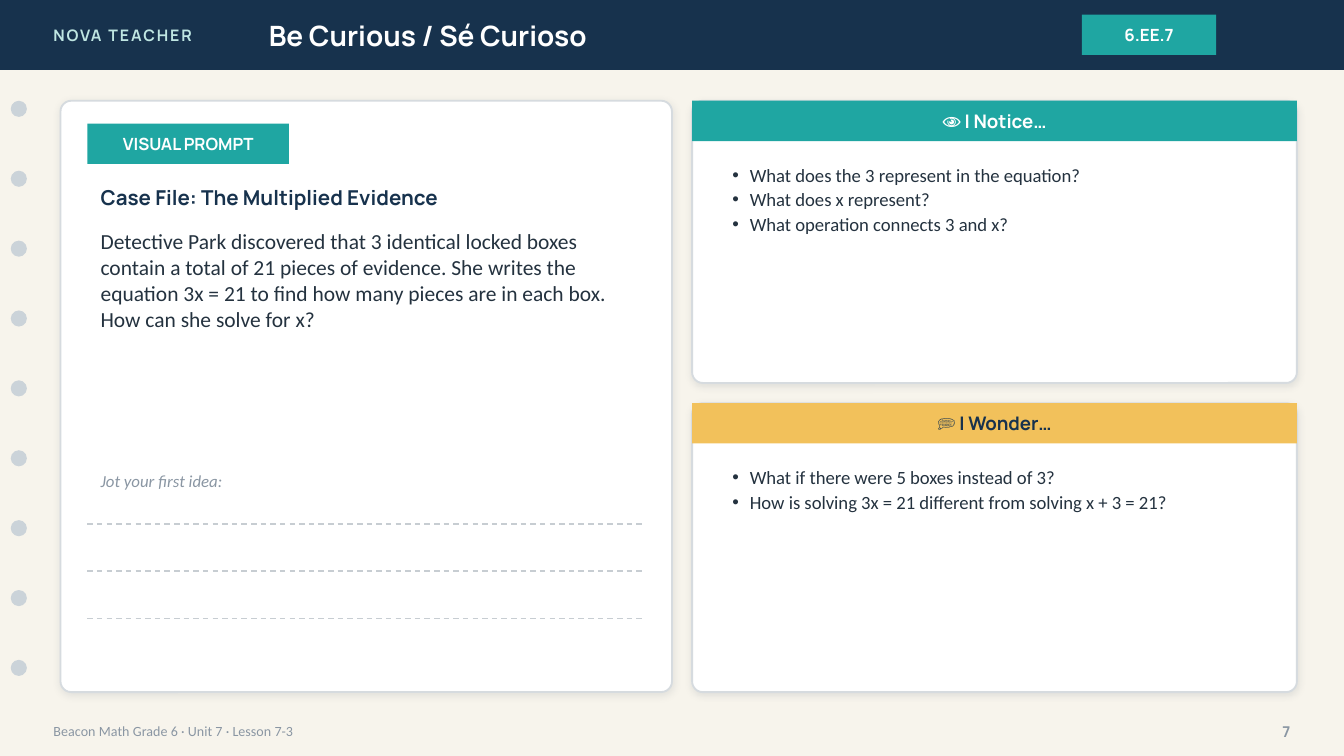
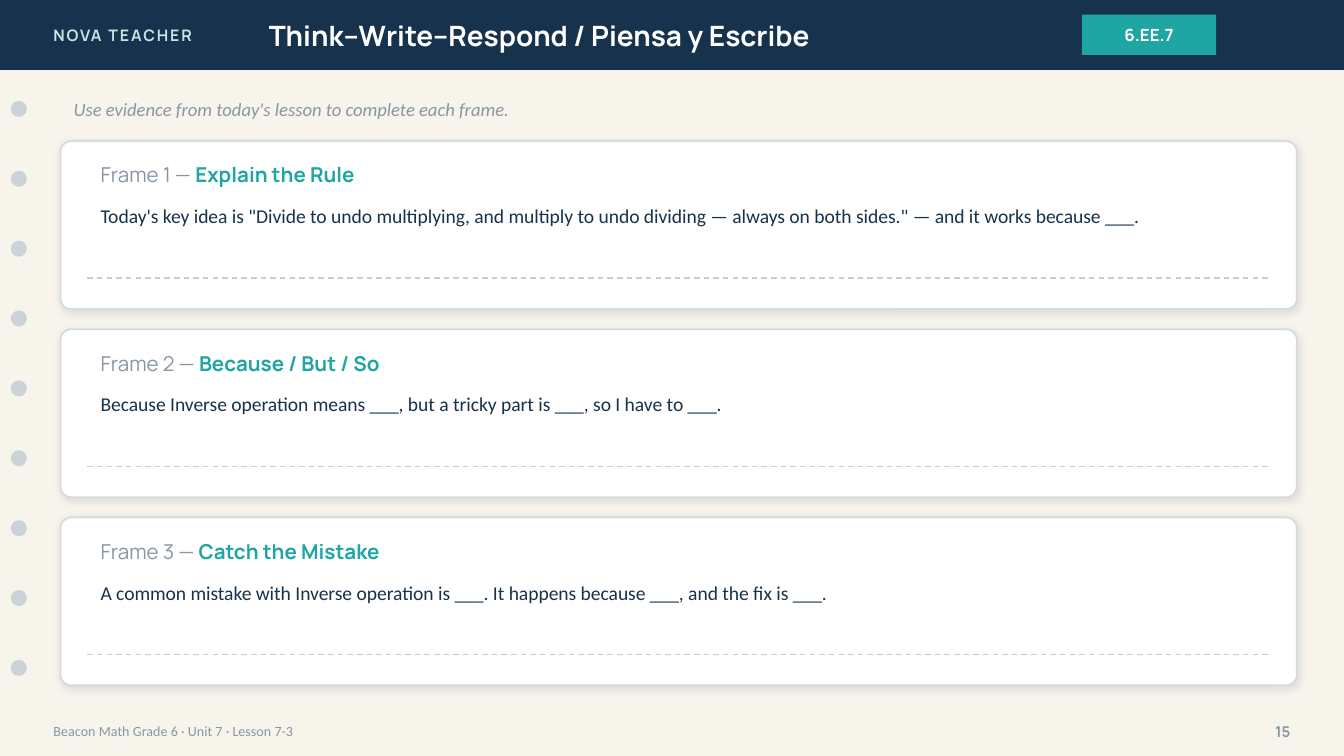
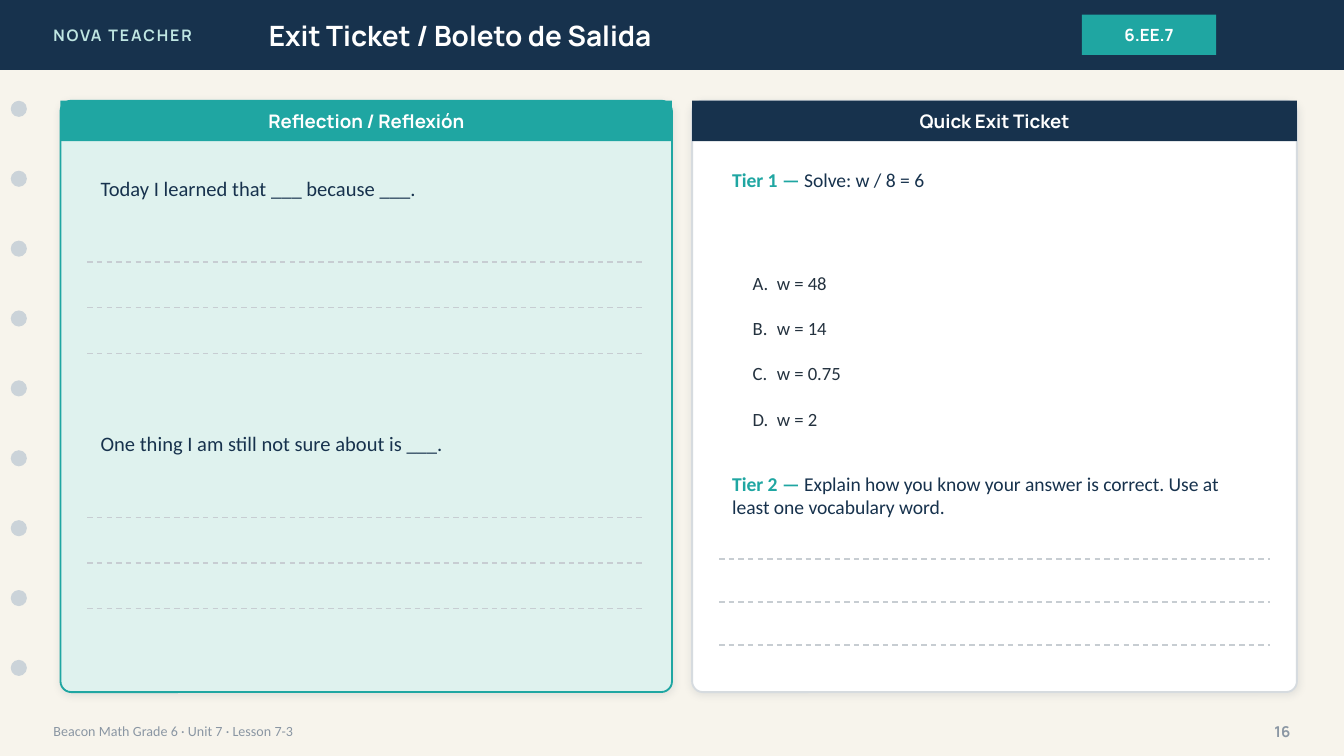
from lxml.etree import SubElement
from pptx import Presentation
from pptx.dml.color import RGBColor
from pptx.enum.dml import MSO_LINE
from pptx.enum.shapes import MSO_CONNECTOR, MSO_SHAPE
from pptx.enum.text import MSO_ANCHOR, MSO_AUTO_SIZE, PP_ALIGN
from pptx.oxml.ns import qn
from pptx.util import Inches, Pt

# Content
BRAND = "NOVA TEACHER"
STANDARD = "6.EE.7"
FOOTER = "Beacon Math Grade 6 · Unit 7 · Lesson 7-3"

CASE_TITLE = "Case File: The Multiplied Evidence"
CASE_TEXT = (
    "Detective Park discovered that 3 identical locked boxes contain a total of "
    "21 pieces of evidence. She writes the equation 3x = 21 to find how many "
    "pieces are in each box. How can she solve for x?"
)
# heading, band colour, heading colour, top, height, questions
CURIOUS = [
    ("👁 I Notice…", "teal", "white", 0.75, 2.1, [
        "What does the 3 represent in the equation?",
        "What does x represent?",
        "What operation connects 3 and x?",
    ]),
    ("💭 I Wonder…", "gold", "navy", 3, 2.15, [
        "What if there were 5 boxes instead of 3?",
        "How is solving 3x = 21 different from solving x + 3 = 21?",
    ]),
]
FRAME_HINT = "Use evidence from today's lesson to complete each frame."
FRAMES = [
    ("Explain the Rule",
     'Today\'s key idea is "Divide to undo multiplying, and multiply to undo '
     'dividing — always on both sides." — and it works because ___.'),
    ("Because / But / So",
     "Because Inverse operation means ___, but a tricky part is ___, so I have to ___."),
    ("Catch the Mistake",
     "A common mistake with Inverse operation is ___. It happens because ___, "
     "and the fix is ___."),
]
REFLECTIONS = [
    "Today I learned that ___ because ___.",
    "One thing I am still not sure about is ___.",
]
TIERS = [
    ("Tier 1 — ", "Solve: w / 8 = 6", 1.2, 0.7),
    ("Tier 2 — ", "Explain how you know your answer is correct. "
     "Use at least one vocabulary word.", 3.46, 0.55),
]
OPTIONS = ["w = 48", "w = 14", "w = 0.75", "w = 2"]

# Style
C = {
    "paper": "F7F4EC", "navy": "17324D", "teal": "1FA6A2", "gold": "F2C15B",
    "white": "FFFFFF", "mint": "DFF2EE", "brand": "BFE6E2", "dot": "CBD3D9",
    "ink": "24323F", "muted": "8A96A3", "edge": "D6DBDF", "rule": "C7CDD2",
    "shadow": "1C2E42",
}
HEAD, BODY = "Manrope", "Calibri"
W, H = 10, 5.625
BAND_H, STRIP_H = 0.52, 0.3
TOP, FULL_H = 0.75, 4.4
LEFT_X, LEFT_W = 0.45, 4.55
RIGHT_X, RIGHT_W = 5.15, 4.5
WIDE_W = RIGHT_X + RIGHT_W - LEFT_X
PAD, RADIUS = 0.2, 0.08


def rgb(name):
    return RGBColor.from_string(C[name])


def inches(*values):
    return [Inches(v) for v in values]


def write(tf, text, size, color, font=BODY, bold=False, italic=False,
          align=PP_ALIGN.LEFT, anchor=MSO_ANCHOR.MIDDLE):
    tf.text = text
    tf.word_wrap = True
    tf.auto_size = MSO_AUTO_SIZE.NONE
    tf.vertical_anchor = anchor
    for p in tf.paragraphs:
        p.alignment = align
        for r in p.runs:
            style_run(r, size, color, font, bold, italic)


def style_run(r, size, color, font, bold=False, italic=False):
    r.font.size, r.font.name = Pt(size), font
    r.font.bold, r.font.italic = bold, italic
    r.font.color.rgb = rgb(color)


def label(s, box, text, size, color, **style):
    tf = s.shapes.add_textbox(*inches(*box)).text_frame
    write(tf, text, size, color, **style)
    return tf


def place(s, ph, box):
    """Move a placeholder to its box, in front of what is already drawn."""
    ph.left, ph.top, ph.width, ph.height = inches(*box)
    s.shapes.element.append(ph.element)


def fill_list(s, ph, box, items, marker, indent, spacing, gap=0,
              anchor=MSO_ANCHOR.TOP):
    place(s, ph, box)
    write(ph.text_frame, "\n".join(items), 10, "ink", anchor=anchor)
    tag, attribute, value = marker
    for i, p in enumerate(ph.text_frame.paragraphs):
        pPr = p._p.get_or_add_pPr()
        pPr.set("marL", str(Inches(indent)))
        pPr.set("indent", str(-Inches(indent)))
        SubElement(pPr, qn(tag)).set(attribute, value)
        p.line_spacing = spacing
        p.space_before = Pt(gap if i else 0)


def block(s, kind, box, fill):
    sp = s.shapes.add_shape(kind, *inches(*box))
    sp.shadow.inherit = False
    sp.fill.solid()
    sp.fill.fore_color.rgb = rgb(fill)
    sp.line.fill.background()
    return sp


def strip(s, box, text, fill="teal", color="white", size=10):
    sp = block(s, MSO_SHAPE.RECTANGLE, box, fill)
    write(sp.text_frame, text, size, color, font=HEAD, bold=True,
          align=PP_ALIGN.CENTER)


def card(s, box, fill="white", edge="edge"):
    sp = block(s, MSO_SHAPE.ROUNDED_RECTANGLE, box, fill)
    sp.adjustments[0] = RADIUS / min(box[2:])
    sp.line.color.rgb = rgb(edge)
    sp.line.width = Pt(1)
    effects = sp._element.spPr.find(qn("a:effectLst"))
    shadow = SubElement(effects, qn("a:outerShdw"), blurRad=str(Pt(4)),
                        dist=str(Pt(1)), dir="5400000", rotWithShape="0")
    color = SubElement(shadow, qn("a:srgbClr"), val=C["shadow"])
    SubElement(color, qn("a:alpha"), val="10000")


def writing_lines(s, x, y, w, count=1, step=0):
    for i in range(count):
        y_line = y + i * step
        line = s.shapes.add_connector(
            MSO_CONNECTOR.STRAIGHT, *inches(x, y_line, x + w, y_line))
        line.line.color.rgb = rgb("rule")
        line.line.width = Pt(0.75)
        line.line.dash_style = MSO_LINE.DASH
        SubElement(line._element.spPr, qn("a:effectLst"))


def new_slide(prs, layout, title, number):
    s = prs.slides.add_slide(prs.slide_layouts.get_by_name(layout))
    block(s, MSO_SHAPE.RECTANGLE, (0, 0, W, BAND_H), "navy")
    tf = label(s, (0.3, 0, 2.4, BAND_H), BRAND, 8.5, "brand", font=HEAD, bold=True)
    tf.paragraphs[0].runs[0].font._element.set("spc", "100")
    place(s, s.shapes.title, (1.9, 0, 5.6, BAND_H))
    write(s.shapes.title.text_frame, title, 15, "white", font=HEAD, bold=True)
    strip(s, (8.05, 0.11, 1, STRIP_H), STANDARD, size=9)
    for i in range(9):
        block(s, MSO_SHAPE.OVAL, (0.08, TOP + i * 0.52, 0.12, 0.12), "dot")
    label(s, (0.3, 5.3, 7, 0.28), FOOTER, 7.5, "muted")
    label(s, (9.2, 5.3, 0.5, 0.28), str(number), 8, "muted", font=HEAD,
          bold=True, align=PP_ALIGN.RIGHT)
    return s


def be_curious(prs):
    s = new_slide(prs, "Two Content", "Be Curious / Sé Curioso", 7)
    x, w = LEFT_X + PAD, LEFT_W - 2 * PAD
    card(s, (LEFT_X, TOP, LEFT_W, FULL_H))
    strip(s, (x, 0.92, 1.5, STRIP_H), "VISUAL PROMPT", size=9)
    label(s, (x, 1.32, w, 0.3), CASE_TITLE, 11, "navy", font=HEAD, bold=True)
    label(s, (x, 1.65, w, 1.7), CASE_TEXT, 11.5, "ink", anchor=MSO_ANCHOR.TOP)
    label(s, (x, 3.45, 4, 0.25), "Jot your first idea:", 9, "muted", italic=True)
    writing_lines(s, x, 3.9, w, 3, 0.35)

    bodies = [ph for ph in s.placeholders if ph.placeholder_format.idx in (1, 2)]
    for ph, (heading, fill, color, top, h, questions) in zip(bodies, CURIOUS):
        card(s, (RIGHT_X, top, RIGHT_W, h))
        strip(s, (RIGHT_X, top, RIGHT_W, STRIP_H), heading, fill, color)
        fill_list(s, ph, (RIGHT_X + PAD, top + 0.4, RIGHT_W - 2 * PAD, h - 0.5),
                  questions, ("a:buChar", "char", "•"), 0.13, 1.1)


def think_write_respond(prs):
    s = new_slide(prs, "Title Only", "Think–Write–Respond / Piensa y Escribe", 15)
    label(s, (LEFT_X, 0.66, WIDE_W, 0.3), FRAME_HINT, 10, "muted", italic=True)
    x, w = LEFT_X + PAD, WIDE_W - 2 * PAD
    for i, (name, sentence) in enumerate(FRAMES):
        y = 1.05 + i * 1.4
        card(s, (LEFT_X, y, WIDE_W, 1.25))
        tf = label(s, (x, y + 0.1, w, 0.3), f"Frame {i + 1} — ", 11, "muted", font=HEAD)
        r = tf.paragraphs[0].add_run()
        r.text = name
        style_run(r, 11, "teal", HEAD, bold=True)
        label(s, (x, y + 0.42, w, 0.4), sentence, 10.5, "navy", anchor=MSO_ANCHOR.TOP)
        writing_lines(s, x, y + 1.02, w)


def exit_ticket(prs):
    s = new_slide(prs, "Title and Content", "Exit Ticket / Boleto de Salida", 16)
    x, w = LEFT_X + PAD, LEFT_W - 2 * PAD
    card(s, (LEFT_X, TOP, LEFT_W, FULL_H), "mint", "teal")
    strip(s, (LEFT_X, TOP, LEFT_W, STRIP_H), "Reflection / Reflexión")
    for i, starter in enumerate(REFLECTIONS):
        y = 1.2 + i * 1.9
        label(s, (x, y, w, 0.4), starter, 11, "navy")
        writing_lines(s, x, y + 0.75, w, 3, 0.34)

    x, w = RIGHT_X + PAD, RIGHT_W - 2 * PAD
    card(s, (RIGHT_X, TOP, RIGHT_W, FULL_H))
    strip(s, (RIGHT_X, TOP, RIGHT_W, STRIP_H), "Quick Exit Ticket", "navy")
    for tier, task, y, h in TIERS:
        tf = label(s, (x, y, w, h), tier, 10.5, "teal", bold=True,
                   anchor=MSO_ANCHOR.TOP)
        r = tf.paragraphs[0].add_run()
        r.text = task
        style_run(r, 10.5, "navy", BODY)
    fill_list(s, s.placeholders[1], (x + 0.15, 1.95, 3.9, 1.32), OPTIONS,
              ("a:buAutoNum", "type", "alphaUcPeriod"), 0.18, 1, gap=12.3,
              anchor=MSO_ANCHOR.MIDDLE)
    writing_lines(s, x, 4.16, w, 3, 0.32)


def main():
    prs = Presentation()
    prs.slide_width, prs.slide_height = inches(W, H)
    background = prs.slide_master.background.fill
    background.solid()
    background.fore_color.rgb = rgb("paper")
    be_curious(prs)
    think_write_respond(prs)
    exit_ticket(prs)
    prs.save("out.pptx")


if __name__ == "__main__":
    main()
